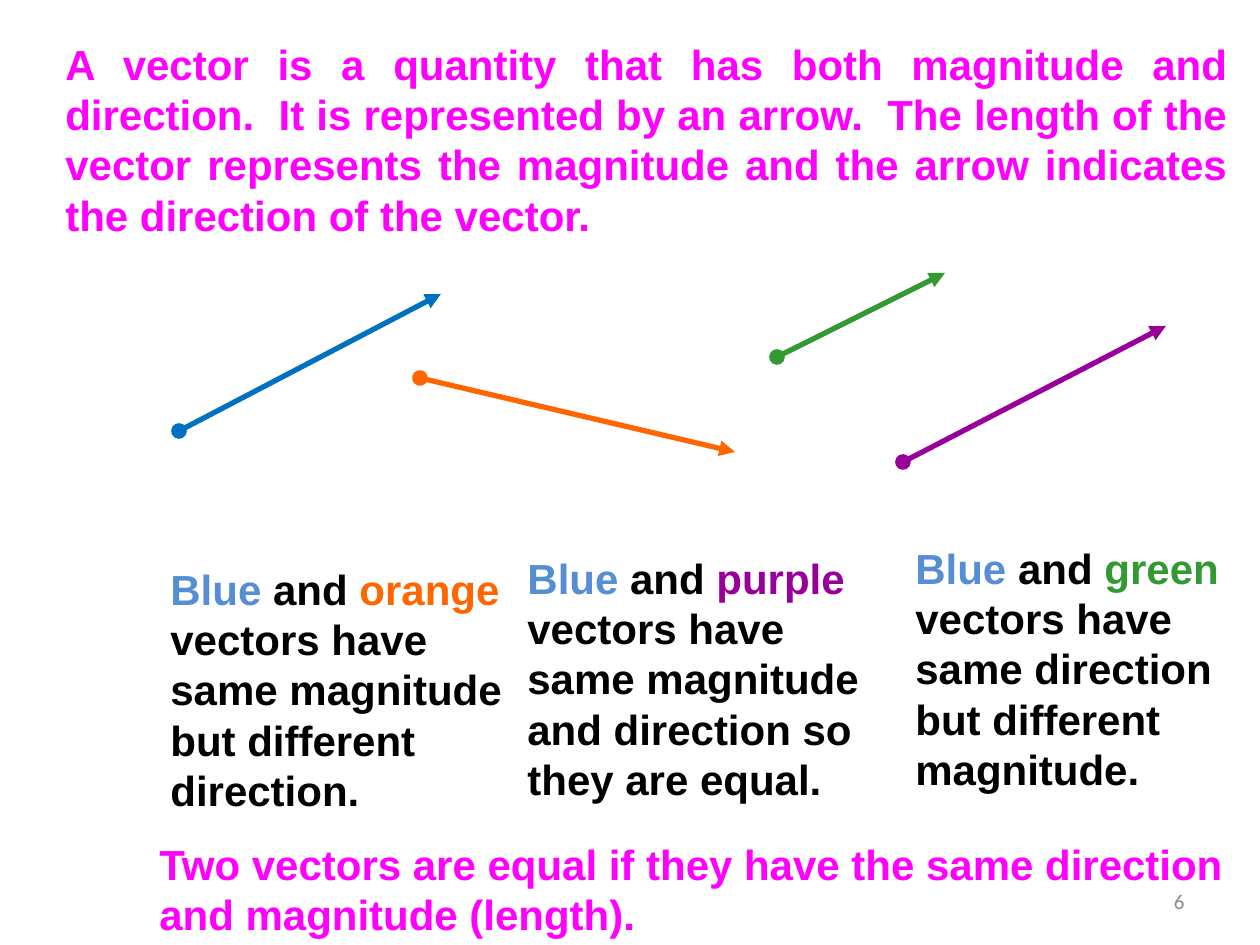
from typing import NamedTuple

from lxml import etree
from pptx import Presentation
from pptx import util as u
from pptx.dml.color import RGBColor
from pptx.enum import shapes, text
from pptx.oxml import ns

PX = 914400 // 126  # EMU per px

COLORS = {
    "magenta": "FF00FF",
    "blue": "0070C0",
    "light_blue": "558ED5",
    "orange": "FF6600",
    "purple": "990099",
    "green": "339933",
    "black": "000000",
    "gray": "8C8C8C",
}


class Vector(NamedTuple):
    color: str
    start: tuple[int, int]
    end: tuple[int, int]


class Comparison(NamedTuple):
    box: tuple[int, int, int, int]
    color: str
    rest: str


VECTORS = [
    Vector("blue", (179, 431), (441, 294)),
    Vector("purple", (903, 462), (1166, 326)),
    Vector("green", (777, 357), (945, 273)),
    Vector("orange", (420, 378), (735, 452)),
]

COMPARISONS = [
    Comparison((158, 557, 357, 267), "orange",
               "vectors have same magnitude but different direction."),
    Comparison((903, 536, 357, 267), "green",
               "vectors have same direction but different magnitude."),
    Comparison((515, 546, 388, 267), "purple",
               "vectors have same magnitude and direction so they are equal."),
]


def px(n: int) -> u.Emu:
    return u.Emu(n * PX)


def add_text(s, box: tuple[int, int, int, int], runs: list[tuple[str, str]], *,
             font="Arial", size=24, bold=True, align=text.PP_ALIGN.LEFT,
             anchor=text.MSO_ANCHOR.TOP, fit=text.MSO_AUTO_SIZE.SHAPE_TO_FIT_TEXT):
    """Add a text box holding one paragraph of (text, colour name) runs."""
    sp = s.shapes.add_textbox(*map(px, box))
    tf = sp.text_frame
    tf.word_wrap = True
    tf.auto_size = fit
    tf.vertical_anchor = anchor
    p = tf.paragraphs[0]
    p.alignment = align
    for content, color in runs:
        r = p.add_run()
        r.text = content
        r.font.name = font
        r.font.size = u.Pt(size)
        r.font.bold = bold
        r.font.color.rgb = RGBColor.from_string(COLORS[color])
    return sp


def add_vector(s, v: Vector):
    """Draw an arrow with a round tail."""
    sp = s.shapes.add_connector(shapes.MSO_CONNECTOR.STRAIGHT,
                                *map(px, v.start + v.end))
    sp.line.width = u.Pt(3)
    sp.line.color.rgb = RGBColor.from_string(COLORS[v.color])
    ln = sp.line._get_or_add_ln()
    for tag, kind in (("a:headEnd", "oval"), ("a:tailEnd", "triangle")):
        etree.SubElement(ln, ns.qn(tag), type=kind)
    etree.SubElement(sp._element.spPr, ns.qn("a:effectLst"))
    return sp


def main():
    prs = Presentation()
    prs.slide_width, prs.slide_height = u.Inches(10), u.Inches(7.5)
    s = prs.slides.add_slide(prs.slide_layouts[6])

    # Definition
    add_text(s, (53, 32, 1187, 217), [(
        "A vector is a quantity that has both magnitude and direction.  "
        "It is represented by an arrow.  The length of the vector represents "
        "the magnitude and the arrow indicates the direction of the vector.",
        "magenta")], align=text.PP_ALIGN.JUSTIFY)

    # Vectors
    for v in VECTORS:
        add_vector(s, v)

    # Conclusion
    add_text(s, (147, 832, 1113, 115), [(
        "Two vectors are equal if they have the same direction "
        "and magnitude (length).", "magenta")])

    # Comparisons with the blue vector
    for c in COMPARISONS:
        add_text(s, c.box, [("Blue", "light_blue"), (" and ", "black"),
                            (c.color, c.color), (" " + c.rest, "black")])

    # Slide number
    add_text(s, (903, 876, 294, 50), [("6", "gray")], font="Calibri", size=12,
             bold=False, align=text.PP_ALIGN.RIGHT,
             anchor=text.MSO_ANCHOR.MIDDLE, fit=text.MSO_AUTO_SIZE.NONE)

    prs.save("out.pptx")


if __name__ == "__main__":
    main()
